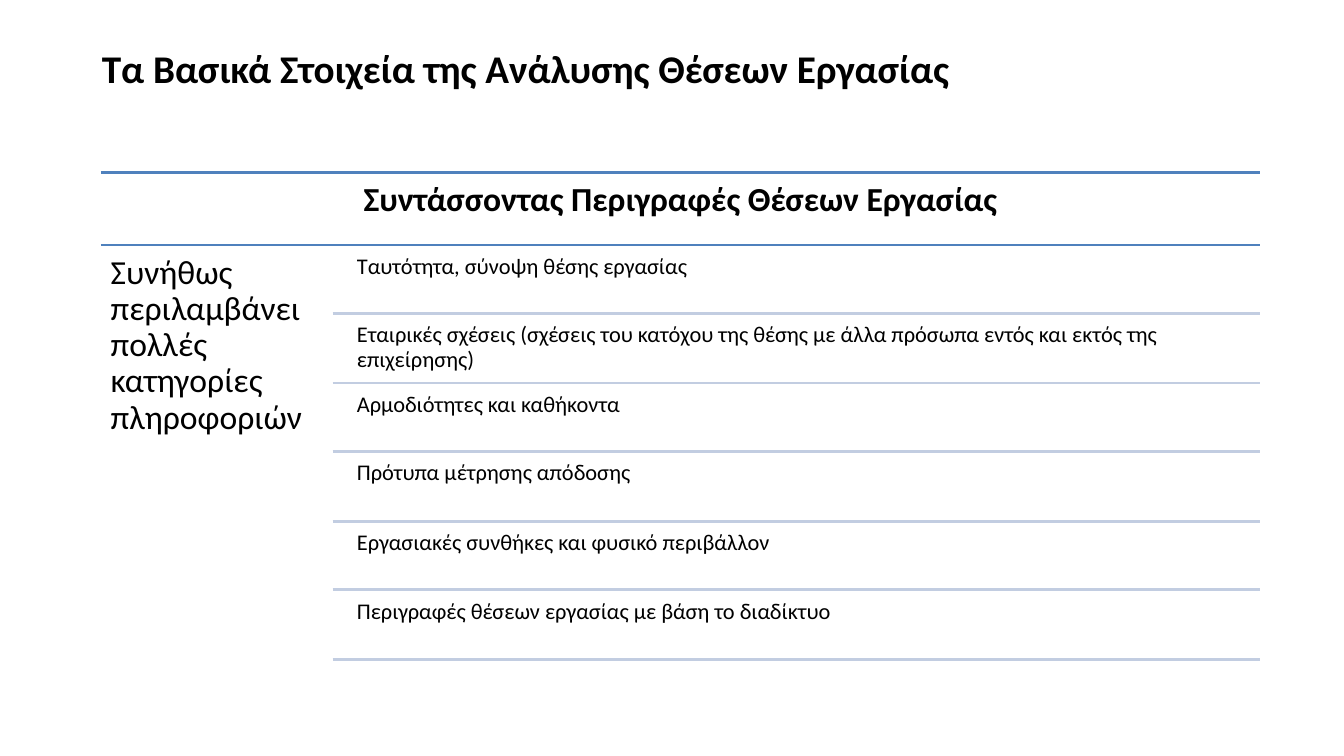
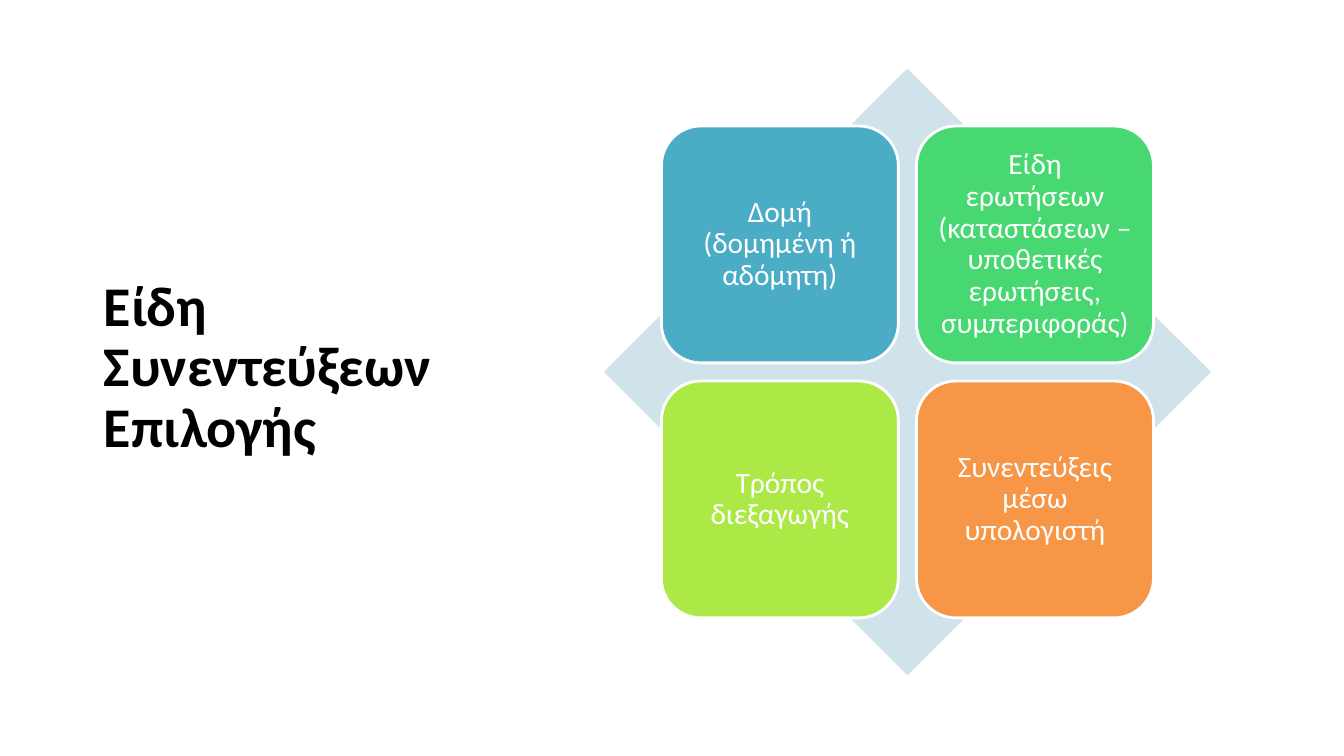
from lxml.etree import SubElement
from pptx import Presentation
from pptx.dml.color import RGBColor
from pptx.enum.shapes import MSO_CONNECTOR, MSO_SHAPE
from pptx.enum.text import MSO_ANCHOR as ANCHOR, MSO_AUTO_SIZE, PP_ALIGN as ALIGN
from pptx.oxml.ns import qn
from pptx.util import Pt

PX = 9144  # 100 px to the inch
FONT = "Calibri"
BLACK, WHITE = "000000", "FFFFFF"
BLUE, PALE_BLUE, MIST = "4F81BD", "C2CDE1", "D0E3EA"


def rgb(value):
    return RGBColor.from_string(value)


def emu(*lengths):
    return [n * PX for n in lengths]


class Deck:
    def __init__(self, width, height):
        self.prs = Presentation()
        self.prs.slide_width, self.prs.slide_height = emu(width, height)
        self.s = None

    def slide(self):
        self.s = self.prs.slides.add_slide(self.prs.slide_layouts[5])

    def set_text(self, tf, text, size, color=BLACK, bold=False,
                 align=ALIGN.LEFT, anchor=ANCHOR.TOP,
                 insets=(10, 10, 10, 10), spacing=0.9):
        tf.text = text
        tf.word_wrap = True
        tf.auto_size = MSO_AUTO_SIZE.NONE
        tf.vertical_anchor = anchor
        (tf.margin_left, tf.margin_top,
         tf.margin_right, tf.margin_bottom) = emu(*insets)
        p = tf.paragraphs[0]
        p.alignment, p.line_spacing = align, spacing
        font = p.runs[0].font
        font.name, font.size, font.bold = FONT, Pt(size), bold
        font.color.rgb = rgb(color)

    def title(self, text, box, size, **style):
        sp = self.s.shapes.title
        sp.left, sp.top, sp.width, sp.height = emu(*box)
        self.set_text(sp.text_frame, text, size, bold=True, **style)

    def text(self, text, box, size, **style):
        sp = self.s.shapes.add_textbox(*emu(*box))
        self.set_text(sp.text_frame, text, size, **style)

    def rule(self, left, right, y, color):
        line = self.s.shapes.add_connector(
            MSO_CONNECTOR.STRAIGHT, *emu(left, y, right, y))
        line.line.color.rgb = rgb(color)
        line.line.width = Pt(2)
        SubElement(line._element.spPr, qn("a:effectLst"))

    def shape(self, kind, box, fill, outline=None):
        sp = self.s.shapes.add_shape(kind, *emu(*box))
        sp.shadow.inherit = False
        sp.fill.solid()
        sp.fill.fore_color.rgb = rgb(fill)
        if outline:
            sp.line.color.rgb = rgb(outline)
            sp.line.width = Pt(2)
        else:
            sp.line.fill.background()
        return sp

    def card(self, text, box, fill):
        sp = self.shape(MSO_SHAPE.ROUNDED_RECTANGLE, box, fill, WHITE)
        self.set_text(sp.text_frame, text, 21, WHITE, align=ALIGN.CENTER,
                      anchor=ANCHOR.MIDDLE, insets=(9, 9, 9, 9))


def job_descriptions(deck):
    deck.slide()
    deck.title("Τα Βασικά Στοιχεία της Ανάλυσης Θέσεων Εργασίας",
               (100, 15, 1133, 138), 28, insets=(1, 29, 0, 0), spacing=1.0)

    # Heading between two rules
    left, right, head, body, bottom = 100, 1250, 171, 243, 654
    for y in (head, body):
        deck.rule(left, right, y, BLUE)
    deck.text("Συντάσσοντας Περιγραφές Θέσεων Εργασίας",
              (left, head, right - left, body - head), 24,
              bold=True, align=ALIGN.CENTER)
    deck.text("Συνήθως περιλαμβάνει πολλές κατηγορίες πληροφοριών",
              (left, body, 230, bottom - body), 24)

    # Equal rows, each closed by a rule
    rows = [
        "Ταυτότητα, σύνοψη θέσης εργασίας",
        "Εταιρικές σχέσεις (σχέσεις του κατόχου της θέσης με άλλα πρόσωπα "
        "εντός και εκτός της επιχείρησης)",
        "Αρμοδιότητες και καθήκοντα",
        "Πρότυπα μέτρησης απόδοσης",
        "Εργασιακές συνθήκες και φυσικό περιβάλλον",
        "Περιγραφές θέσεων εργασίας με βάση το διαδίκτυο",
    ]
    edges = [body + (bottom - body) * i // len(rows)
             for i in range(len(rows) + 1)]
    for row, top, end in zip(rows, edges, edges[1:]):
        deck.text(row, (347, top + 3, right - 347, 65), 16,
                  insets=(7, 7, 7, 7))
        deck.rule(330, right, end, PALE_BLUE)


def interview_types(deck):
    deck.slide()
    deck.title("Είδη Συνεντεύξεων Επιλογής", (92, 61, 369, 609), 40,
               anchor=ANCHOR.MIDDLE, insets=(11, 5, 10, 5))

    # Diamond behind a two by two grid of cards
    deck.shape(MSO_SHAPE.DIAMOND, (599, 68, 602, 602), MIST)
    cards = [
        ("Δομή (δομημένη ή αδόμητη)", "4BACC6"),
        ("Είδη ερωτήσεων (καταστάσεων – υποθετικές ερωτήσεις, "
         "συμπεριφοράς)", "47D872"),
        ("Τρόπος διεξαγωγής", "ACE946"),
        ("Συνεντεύξεις μέσω υπολογιστή", "F79646"),
    ]
    size, pitch = 235, 253
    for i, (text, fill) in enumerate(cards):
        row, col = divmod(i, 2)
        deck.card(text, (656 + col * pitch, 125 + row * pitch, size, size),
                  fill)


def main():
    deck = Deck(1333, 750)
    job_descriptions(deck)
    interview_types(deck)
    deck.prs.save("out.pptx")


if __name__ == "__main__":
    main()
